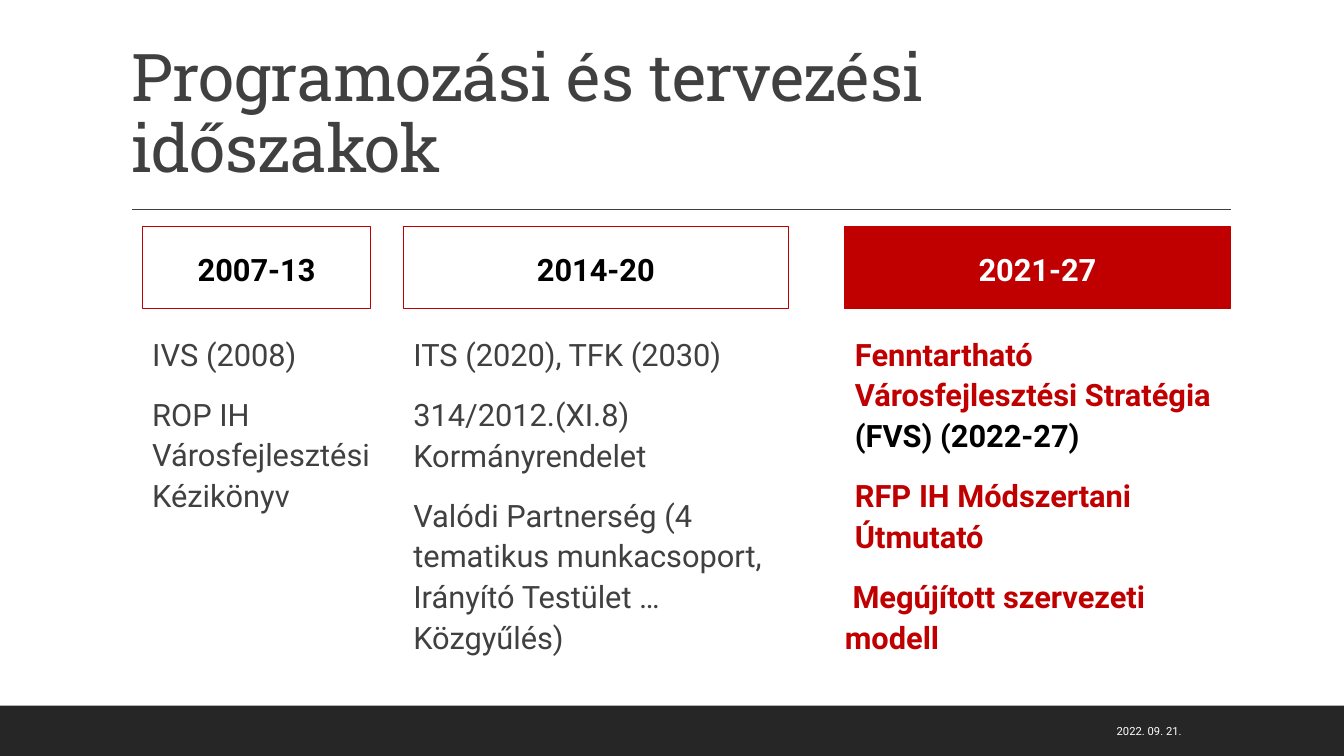
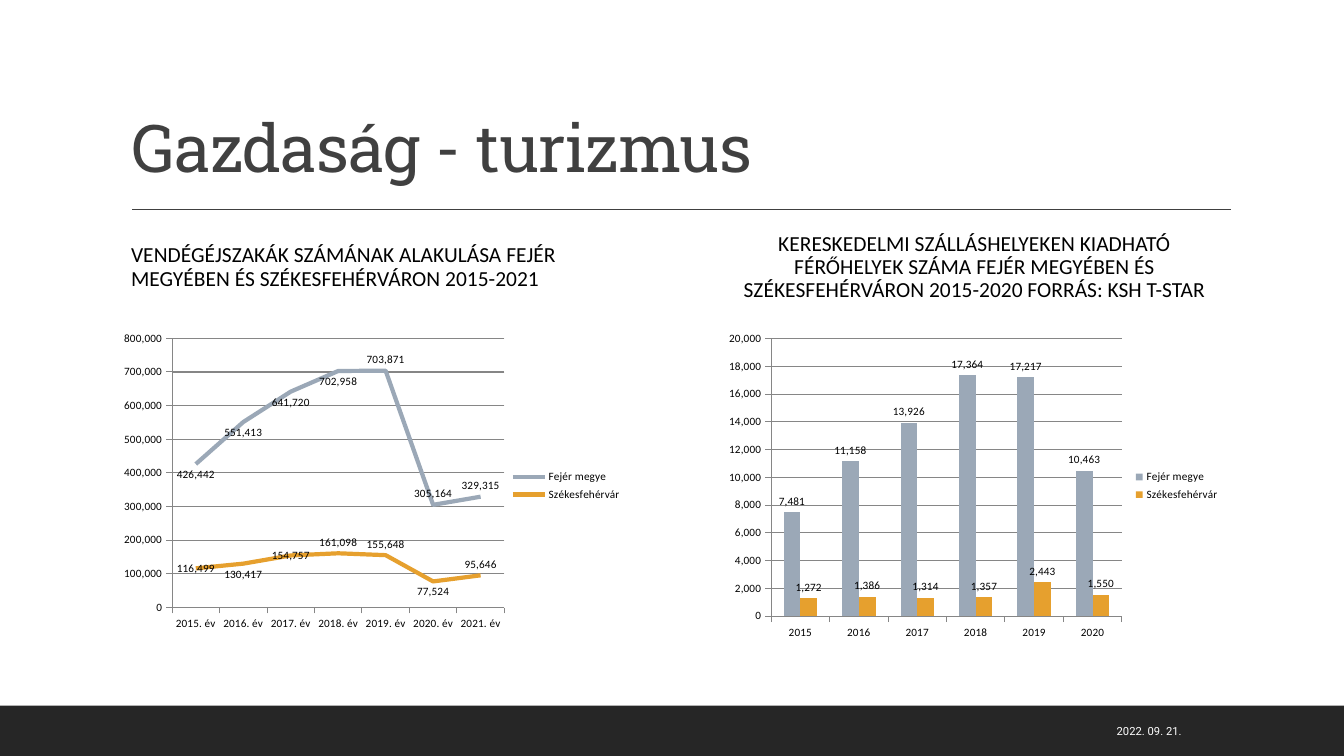
from lxml import etree
from pptx import Presentation
from pptx.chart.data import CategoryChartData
from pptx.dml.color import RGBColor
from pptx.enum.chart import XL_CHART_TYPE, XL_LABEL_POSITION, XL_LEGEND_POSITION, XL_TICK_MARK
from pptx.enum.shapes import MSO_CONNECTOR, MSO_SHAPE
from pptx.enum.text import MSO_ANCHOR, MSO_AUTO_SIZE, PP_ALIGN
from pptx.oxml import parse_xml
from pptx.oxml.ns import nsdecls, qn
from pptx.util import Inches, Pt

COLORS = {"band": "262626", "text": "404040", "red": "C00000", "black": "000000",
          "white": "FFFFFF", "grid": "868686", "county": "9BA8B7", "city": "E6A02E"}
TITLE_FONT, BODY_FONT, CHART_FONT = "Roboto Slab", "Roboto", "Calibri"
TITLE_BOX = (1.2, 0.31, 11, 1.59)
HEAD_TOP, HEAD_H = 2.25, 0.81
BODY_TOP, BODY_H = 3.24, 3.18
ABOVE, BELOW, CENTER = XL_LABEL_POSITION.ABOVE, XL_LABEL_POSITION.BELOW, XL_LABEL_POSITION.CENTER


def rgb(name):
    return RGBColor.from_string(COLORS[name])


def place(sp, x, y, w, h):
    sp.left, sp.top, sp.width, sp.height = (Inches(v) for v in (x, y, w, h))


def frame(sp, anchor=MSO_ANCHOR.MIDDLE, side=0.1):
    tf = sp.text_frame
    tf.word_wrap = True
    tf.auto_size = MSO_AUTO_SIZE.NONE
    tf.vertical_anchor = anchor
    tf.margin_left = tf.margin_right = Inches(side)
    tf.margin_top = tf.margin_bottom = Inches(0.05)
    return tf


def write(p, text, size=22, font=BODY_FONT, color="text", bold=False,
          align=PP_ALIGN.LEFT, spacing=1.0, before=0, after=0, tracking=None):
    p.alignment, p.line_spacing = align, spacing
    p.space_before, p.space_after = Pt(before), Pt(after)
    r = p.add_run()
    r.text = text
    r.font.size, r.font.name, r.font.bold = Pt(size), font, bold
    r.font.color.rgb = rgb(color)
    if tracking is not None:
        r.font._element.set("spc", str(int(tracking * 100)))


def indent(p, left):
    pPr = p._p.get_or_add_pPr()
    pPr.set("marL", str(Inches(left)))
    pPr.set("indent", "0")
    etree.SubElement(pPr, qn("a:buNone"))


def new_slide(prs, title):
    slide = prs.slides.add_slide(prs.slide_layouts[4])
    band = slide.shapes.add_shape(MSO_SHAPE.RECTANGLE, 0, Inches(7), prs.slide_width, Inches(0.5))
    band.shadow.inherit = False
    band.fill.solid()
    band.fill.fore_color.rgb = rgb("band")
    band.line.fill.background()

    rule = slide.shapes.add_connector(MSO_CONNECTOR.STRAIGHT, Inches(1.31), Inches(2.08),
                                      Inches(12.21), Inches(2.08))
    rule.line.color.rgb = rgb("text")
    rule.line.width = Pt(1)
    etree.SubElement(rule._element.spPr, qn("a:effectLst"))

    place(slide.shapes.title, *TITLE_BOX)
    tf = frame(slide.shapes.title, MSO_ANCHOR.BOTTOM)
    write(tf.paragraphs[0], title, size=47, font=TITLE_FONT, spacing=0.9, tracking=-0.5)

    date = slide.shapes.add_textbox(Inches(8.99), Inches(7.05), Inches(2.83), Inches(0.4))
    write(frame(date).paragraphs[0], "2022. 09. 21.", size=8, color="white", align=PP_ALIGN.RIGHT)
    return slide


def period_column(head, body, x, w, period, items, current=False):
    place(head, x, HEAD_TOP, w, HEAD_H)
    head.line.color.rgb = rgb("red")
    head.line.width = Pt(0.75)
    if current:
        head.fill.solid()
        head.fill.fore_color.rgb = rgb("red")
    else:
        head.fill.background()
    write(frame(head).paragraphs[0], period, color="white" if current else "black",
          bold=True, align=PP_ALIGN.CENTER, spacing=1.1)

    place(body, x, BODY_TOP, w, BODY_H)
    tf = frame(body, MSO_ANCHOR.TOP, side=0)
    for i, runs in enumerate(items):
        p = tf.add_paragraph() if i else tf.paragraphs[0]
        indent(p, 0 if runs[0][0].startswith(" ") else 0.1)
        for text, color in runs:
            write(p, text, color=color, bold=current, spacing=1.1, before=12 if i else 0, after=2)


def periods_slide(prs):
    slide = new_slide(prs, "Programozási és tervezési időszakok")
    ph = {s.placeholder_format.idx: s for s in slide.placeholders}
    first = [slide.shapes.add_textbox(0, 0, 0, 0) for _ in range(2)]
    period_column(*first, 1.41, 2.27, "2007-13", [
        [("IVS (2008)", "text")],
        [("ROP IH Városfejlesztési Kézikönyv", "text")]])
    period_column(ph[1], ph[2], 4, 3.82, "2014-20", [
        [("ITS (2020), TFK (2030)", "text")],
        [("314/2012.(XI.8) Kormányrendelet", "text")],
        [("Valódi Partnerség (4 tematikus munkacsoport, Irányító Testület … Közgyűlés)", "text")]])
    period_column(ph[3], ph[4], 8.38, 3.82, "2021-27", [
        [("Fenntartható Városfejlesztési Stratégia ", "red"), ("(FVS) (2022-27)", "black")],
        [("RFP IH Módszertani Útmutató", "red")],
        [(" Megújított szervezeti modell", "red")]], current=True)


def style_axis(axis):
    axis.major_tick_mark = XL_TICK_MARK.OUTSIDE
    axis.minor_tick_mark = XL_TICK_MARK.NONE
    axis.format.line.color.rgb = rgb("grid")
    axis.format.line.width = Pt(0.75)


def style_font(font):
    font.size, font.name, font.bold = Pt(8), CHART_FONT, False
    font.color.rgb = rgb("black")


def set_plot_box(chart, x, y, w, h):
    layout = parse_xml(
        f'<c:layout {nsdecls("c")}><c:manualLayout><c:layoutTarget val="inner"/>'
        '<c:xMode val="edge"/><c:yMode val="edge"/>'
        f'<c:x val="{x}"/><c:y val="{y}"/><c:w val="{w}"/><c:h val="{h}"/>'
        '</c:manualLayout></c:layout>')
    area = chart._chartSpace.chart.plotArea
    for old in area.findall(qn("c:layout")):
        area.remove(old)
    area.insert(0, layout)


def chart_panel(slide, head, x, caption, align, kind, cats, series, top, step,
                plot_box=None, positions=None):
    place(head, x, HEAD_TOP, 5.07, HEAD_H)
    write(frame(head).paragraphs[0], caption, size=15.3, font=CHART_FONT, color="black",
          align=align, spacing=0.9)

    data = CategoryChartData(number_format="#,##0")
    data.categories = cats
    for name, values in series:
        data.add_series(name, values)
    chart = slide.shapes.add_chart(kind, Inches(x), Inches(3.23), Inches(5.07),
                                   Inches(BODY_H), data).chart
    style_font(chart.font)
    chart.has_title = False
    chart.has_legend = True
    chart.legend.position = XL_LEGEND_POSITION.RIGHT
    chart.legend.include_in_layout = False
    style_font(chart.legend.font)
    style_axis(chart.category_axis)
    axis = chart.value_axis
    style_axis(axis)
    axis.minimum_scale, axis.maximum_scale, axis.major_unit = 0, top, step
    axis.tick_labels.number_format = "#,##0"
    axis.tick_labels.number_format_is_linked = False
    axis.major_gridlines.format.line.color.rgb = rgb("grid")
    axis.major_gridlines.format.line.width = Pt(0.75)
    if plot_box:
        set_plot_box(chart, *plot_box)

    plot = chart.plots[0]
    plot.vary_by_categories = False
    is_line = kind == XL_CHART_TYPE.LINE
    if not is_line:
        plot.gap_width = 150
    for i, (ser, color) in enumerate(zip(plot.series, ("county", "city"))):
        if is_line:
            ser.smooth = False
            ser.format.line.color.rgb = rgb(color)
            ser.format.line.width = Pt(3)
        else:
            ser.format.fill.solid()
            ser.format.fill.fore_color.rgb = rgb(color)
        labels = ser.data_labels
        labels.show_value = True
        labels.number_format, labels.number_format_is_linked = "#,##0", False
        style_font(labels.font)
        if positions:
            for j, position in enumerate(positions[i]):
                label = ser.points[j].data_label
                style_font(label.font)
                label.position = position
        else:
            labels.position = XL_LABEL_POSITION.OUTSIDE_END


def tourism_slide(prs):
    slide = new_slide(prs, "Gazdaság - turizmus")
    ph = {s.placeholder_format.idx: s for s in slide.placeholders}
    for idx in (2, 4):
        ph[idx]._element.getparent().remove(ph[idx]._element)
    chart_panel(
        slide, ph[3], 7.13,
        "KERESKEDELMI SZÁLLÁSHELYEKEN KIADHATÓ FÉRŐHELYEK SZÁMA FEJÉR MEGYÉBEN ÉS "
        "SZÉKESFEHÉRVÁRON 2015-2020 FORRÁS: KSH T-STAR",
        PP_ALIGN.CENTER, XL_CHART_TYPE.COLUMN_CLUSTERED,
        [str(year) for year in range(2015, 2021)],
        [("Fejér megye", (7481, 11158, 13926, 17364, 17217, 10463)),
         ("Székesfehérvár", (1272, 1386, 1314, 1357, 2443, 1550))],
        20000, 2000)
    chart_panel(
        slide, ph[1], 1.2,
        "VENDÉGÉJSZAKÁK SZÁMÁNAK ALAKULÁSA FEJÉR MEGYÉBEN ÉS SZÉKESFEHÉRVÁRON 2015-2021",
        PP_ALIGN.LEFT, XL_CHART_TYPE.LINE,
        [f"{year}. év" for year in range(2015, 2022)],
        [("Fejér megye", (426442, 551413, 641720, 702958, 703871, 305164, 329315)),
         ("Székesfehérvár", (116499, 130417, 154757, 161098, 155648, 77524, 95646))],
        800000, 100000, plot_box=(0.1, 0.04, 0.65, 0.84),
        positions=[[BELOW] * 4 + [ABOVE] * 3,
                   [CENTER, BELOW, CENTER, ABOVE, ABOVE, BELOW, ABOVE]])


def main():
    prs = Presentation()
    prs.slide_width, prs.slide_height = Inches(13.33), Inches(7.5)
    periods_slide(prs)
    tourism_slide(prs)
    prs.save("out.pptx")


if __name__ == "__main__":
    main()
